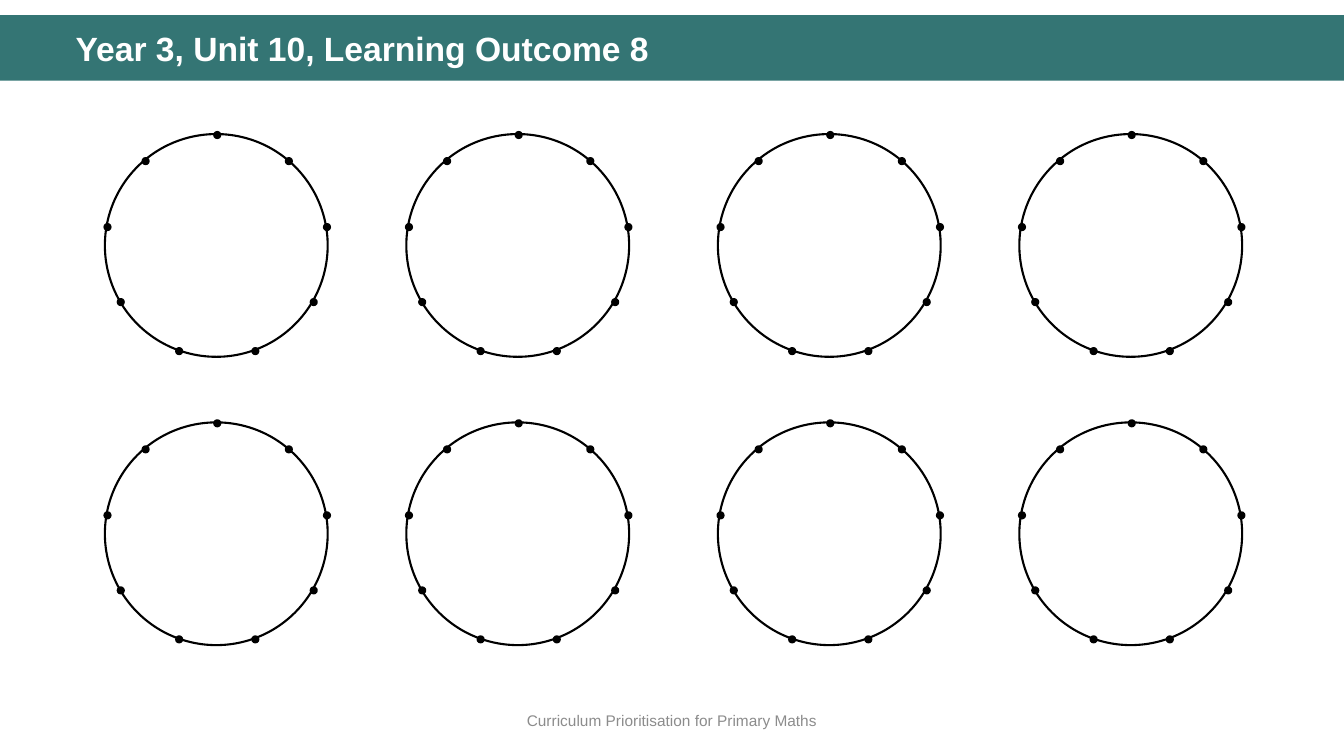
from math import cos, radians, sin

from pptx import Presentation
from pptx.dml.color import RGBColor
from pptx.enum import shapes as sh, text as tx
from pptx.util import Inches, Pt

# Content
TITLE = "Year 3, Unit 10, Learning Outcome 8"
FOOTER = "Curriculum Prioritisation for Primary Maths"
LEFTS = [1.04, 4.03, 7.12, 10.11]
TOPS = [1.33, 4.19]
DOTS = 9

# Sizes in inches
WIDE, HIGH = 13.33, 7.5
RING, DOT, SHIFT = 2.21, 0.06, 0.01

THEME = {
    "font": "Arial",
    "band": RGBColor(0x34, 0x75, 0x74),
    "ink": RGBColor(0, 0, 0),
    "title": (24, RGBColor(255, 255, 255)),
    "footer": (11, RGBColor(0x8C, 0x8C, 0x8C)),
    "line": 1.5,
}


def place(shape, *box):
    shape.left, shape.top, shape.width, shape.height = map(Inches, box)


def write(shape, words, role, align, bold=False):
    frame = shape.text_frame
    frame.word_wrap = True
    frame.auto_size = tx.MSO_AUTO_SIZE.NONE
    frame.vertical_anchor = tx.MSO_ANCHOR.MIDDLE
    para = frame.paragraphs[0]
    para.text, para.alignment = words, align
    font = para.font
    font.name, font.bold = THEME["font"], bold
    size, font.color.rgb = THEME[role]
    font.size = Pt(size)
    return para


def disc(group, x, y, size, filled):
    """Add a round shape centred on x, y."""
    oval = group.shapes.add_shape(
        sh.MSO_SHAPE.OVAL, Inches(x - size / 2), Inches(y - size / 2),
        Inches(size), Inches(size))
    oval.shadow.inherit = False
    if filled:
        oval.fill.solid()
        oval.fill.fore_color.rgb = THEME["ink"]
    else:
        oval.fill.background()
    oval.line.color.rgb = THEME["ink"]
    oval.line.width = Pt(THEME["line"])


def ring(slide, left, top):
    """Add a circle with dots at equal angles, clockwise from the top."""
    group = slide.shapes.add_group_shape()
    rad = RING / 2
    x, y = left + rad, top + rad
    disc(group, x, y, RING, False)
    for i in range(DOTS):
        turn = radians(360 / DOTS * i)
        disc(group, x + SHIFT + rad * sin(turn),
             y + SHIFT - rad * cos(turn), DOT, True)


def main():
    deck = Presentation()
    deck.slide_width, deck.slide_height = Inches(WIDE), Inches(HIGH)
    slide = deck.slides.add_slide(deck.slide_layouts[5])

    # Band, placed behind the title
    band = slide.shapes.add_shape(sh.MSO_SHAPE.RECTANGLE, 0, 0, 0, 0)
    place(band, 0, 0.15, WIDE, 0.65)
    band.shadow.inherit = False
    band.fill.solid()
    band.fill.fore_color.rgb = THEME["band"]
    band.line.fill.background()
    title = slide.shapes.title
    title._element.addprevious(band._element)

    # Title and footer
    place(title, 0.65, 0.27, 12.18, 0.47)
    para = write(title, TITLE, "title", tx.PP_ALIGN.LEFT, True)
    para.line_spacing = 0.9
    footer = slide.shapes.add_textbox(0, 0, 0, 0)
    place(footer, 0, 6.95, WIDE, 0.4)
    write(footer, FOOTER, "footer", tx.PP_ALIGN.CENTER)

    # Grid of dotted circles
    for top in TOPS:
        for left in LEFTS:
            ring(slide, left, top)

    deck.save("out.pptx")


if __name__ == "__main__":
    main()
